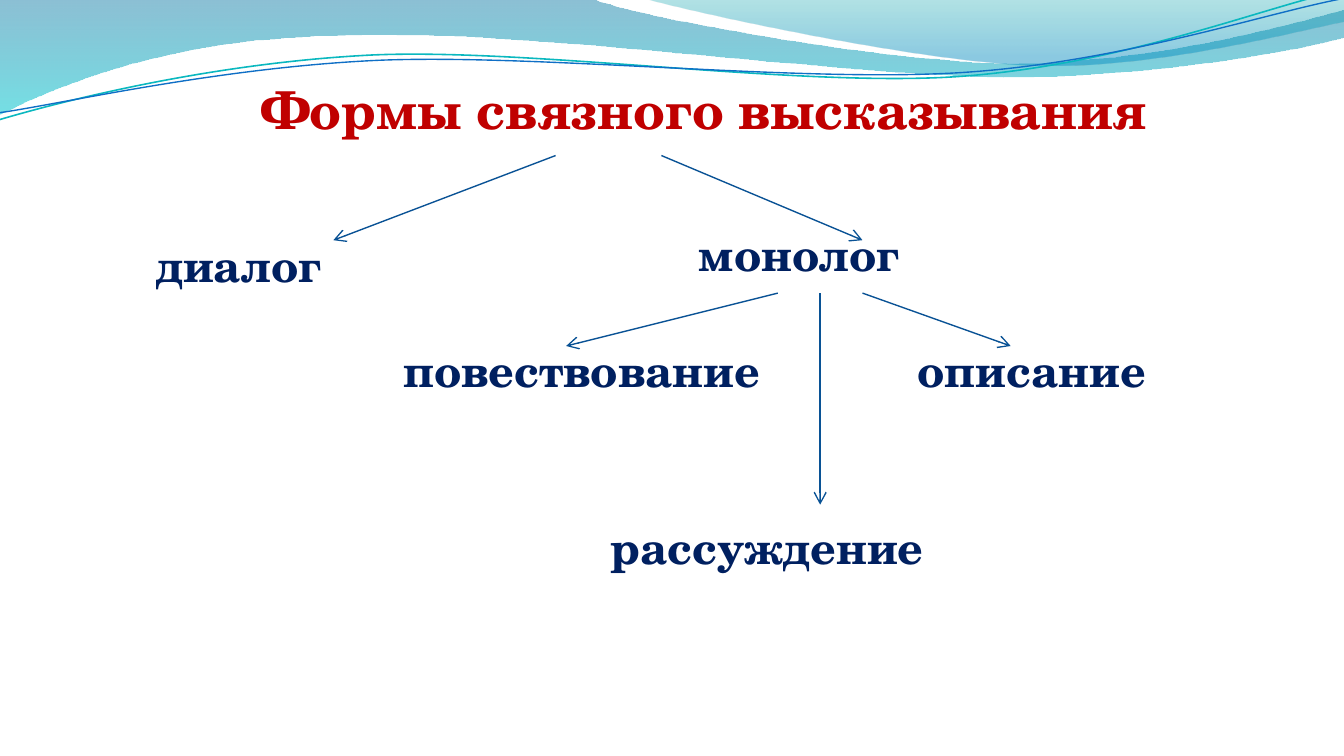
import pptx
import pptx.dml.color
import pptx.enum.shapes
import pptx.enum.text
import pptx.oxml.ns
import pptx.util

Cm = pptx.util.Cm
Pt = pptx.util.Pt
Rgb = pptx.dml.color.RGBColor.from_string
Align = pptx.enum.text.PP_ALIGN
tag = pptx.oxml.ns.qn

theme = {
    "font": "TeX Gyre Schola",
    "title": {"size": Pt(28), "color": "C00000"},
    "label": {"size": Pt(24), "color": "002060"},
    "arrow": {"color": "095295", "width": Pt(0.75)},
}

# Text: words, style, alignment, (left, top, width, height) in cm
texts = [
    ("Формы связного высказывания", "title", Align.CENTER, (1.71, 1.33, 23.19, 1.45)),
    ("диалог", "label", Align.LEFT, (2.7, 3.33, 4.19, 2.31)),
    ("монолог", "label", Align.CENTER, (8.31, 3.12, 13.59, 2.31)),
    ("повествование", "label", Align.CENTER, (7.3, 5.31, 7.39, 2.31)),
    ("описание", "label", Align.CENTER, (14.91, 5.31, 9.19, 2.31)),
    ("рассуждение", "label", Align.CENTER, (10.51, 8.66, 7.98, 2.31)),
]

# Arrows: start and end in cm
arrows = [
    ((12.5, 2.94), (16.3, 4.54)),
    ((10.5, 2.94), (6.3, 4.54)),
    ((16.3, 5.54), (19.1, 6.54)),
    ((14.7, 5.54), (10.7, 6.54)),
    ((15.5, 5.54), (15.5, 9.54)),
]

# Waves: start, then steps of one point (line) or three points (curve);
# stops are (position, color, opacity in percent)
waves = [
    {"start": (0, 0), "stops": [(0, "0074A1", 45), (1, "00C6CF", 55)], "steps": [
        [(11.18, -0.03)],
        [(12.09, 0.33), (16.87, 1.19), (19.25, 1.19)],
        [(21.67, 1.19), (24.33, 0.48), (25.4, 0.18)],
        [(25.43, 0.69)],
        [(24.97, 0.84), (22.1, 1.45), (18.95, 1.45)],
        [(15.8, 1.42), (9.7, 0.53), (6.53, 0.66)],
        [(3.28, 0.69), (1.17, 1.57), (-0.03, 2.16)]]},
    {"start": (12.17, -0.03), "stops": [(0, "00A1A9", 30), (0.8, "008BBF", 45)], "steps": [
        [(12.93, 0.2), (17.32, 1.17), (19.53, 1.24)],
        [(21.74, 1.32), (24.41, 0.61), (25.4, 0.41)],
        [(25.4, 0)]]},
    {"start": (0, 2.26), "line": {"color": "0AB8BF", "width": Pt(0.85)}, "steps": [
        [(1.22, 1.9), (4.01, 1.19), (7.04, 1.04)],
        [(10.06, 0.91), (15.04, 1.65), (18.08, 1.45)],
        [(21.16, 1.24), (23.85, 0.15), (25.35, -0.18)]]},
    {"start": (0, 2.13), "line": {"color": "0F6FC6", "width": Pt(0.75)}, "steps": [
        [(1.19, 1.96), (4.17, 1.27), (7.19, 1.14)],
        [(10.24, 1.02), (15.16, 1.57), (18.21, 1.37)],
        [(21.23, 1.17), (23.9, 0.25), (25.4, -0.03)]]},
]


def put(item, vals):
    for name, val in vals.items():
        if name == "color":
            item.color.rgb = Rgb(val)
        else:
            setattr(item, name, val)


def add_sub(node, name, **vals):
    sub = node.makeelement(tag(name), vals)
    node.append(sub)
    return sub


def bend(shape, steps):
    """Join each three line points into one cubic curve."""
    lines = iter(list(shape.element.spPr.iter(tag("a:lnTo"))))
    for step in steps:
        group = [next(lines) for point in step]
        if len(group) == 3:
            curve = group[0].makeelement(tag("a:cubicBezTo"), {})
            group[0].addprevious(curve)
            for line in group:
                curve.append(line[0])
                line.getparent().remove(line)


def add_wave(shapes, wave):
    steps = wave["steps"]
    pts = [(Cm(x), Cm(y)) for x, y in sum(steps, [wave["start"]])]
    pen = shapes.build_freeform(*pts[0], scale=1.0)
    pen.add_line_segments(pts[1:], close="stops" in wave)
    shape = pen.convert_to_shape()
    bend(shape, steps)
    shape.shadow.inherit = False
    if "line" in wave:
        shape.fill.background()
        put(shape.line, wave["line"])
        return
    shape.line.fill.background()
    shape.fill.gradient()
    shape.fill.gradient_angle = 270
    for stop, (pos, color, alpha) in zip(shape.fill.gradient_stops, wave["stops"]):
        put(stop, {"position": pos, "color": color})
    nodes = list(shape.element.spPr.iter(tag("a:srgbClr")))
    for node, (pos, color, alpha) in zip(nodes, wave["stops"]):
        add_sub(node, "a:alpha", val=str(alpha * 1000))


def add_text(shapes, words, style, align, box):
    frame = shapes.add_textbox(*map(Cm, box)).text_frame
    put(frame, {"word_wrap": True, "vertical_anchor": pptx.enum.text.MSO_ANCHOR.BOTTOM})
    para = frame.paragraphs[0]
    para.alignment = align
    run = para.add_run()
    run.text = words
    put(run.font, {"name": theme["font"], "bold": True, **theme[style]})


def add_arrow(shapes, start, end):
    kind = pptx.enum.shapes.MSO_CONNECTOR.STRAIGHT
    arrow = shapes.add_connector(kind, *map(Cm, start + end))
    put(arrow.line, theme["arrow"])
    props = arrow.element.spPr
    add_sub(props.find(tag("a:ln")), "a:tailEnd", type="arrow")
    add_sub(props, "a:effectLst")


def main():
    deck = pptx.Presentation()
    put(deck, {"slide_width": Cm(25.4), "slide_height": Cm(14.29)})
    shapes = deck.slides.add_slide(deck.slide_layouts[6]).shapes
    # Waves at the top
    for wave in waves:
        add_wave(shapes, wave)
    # Title and labels
    for text in texts:
        add_text(shapes, *text)
    # Arrows between the labels
    for arrow in arrows:
        add_arrow(shapes, *arrow)
    deck.save("out.pptx")


if __name__ == "__main__":
    main()
